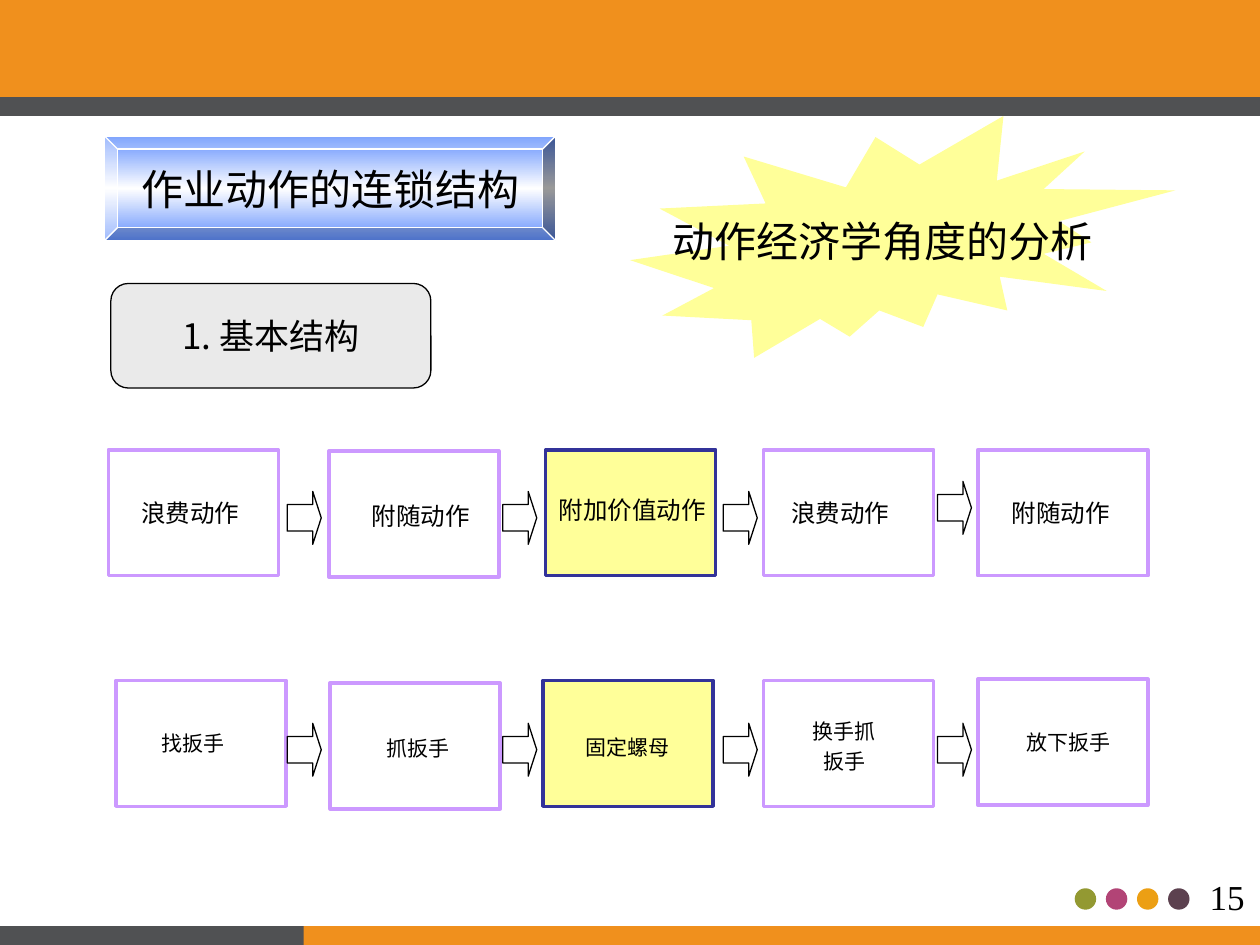
from copy import deepcopy

from lxml.etree import SubElement
from pptx import Presentation
from pptx.dml.color import RGBColor
from pptx.enum.shapes import MSO_SHAPE
from pptx.enum.text import MSO_ANCHOR, PP_ALIGN
from pptx.oxml.ns import qn
from pptx.util import Inches, Pt

ORANGE = RGBColor(0xF0, 0x90, 0x1D)
GRAY = RGBColor(0x50, 0x51, 0x53)
WHITE = RGBColor(0xFF, 0xFF, 0xFF)
BLACK = RGBColor(0, 0, 0)
LILAC = RGBColor(0xCC, 0x99, 0xFF)
YELLOW = RGBColor(0xFF, 0xFF, 0x99)
NAVY = RGBColor(0x33, 0x33, 0x99)
BLUE = RGBColor(0x61, 0x8F, 0xFD)
PALE = RGBColor(0xEA, 0xEA, 0xEA)
DOTS = [RGBColor(0x93, 0x99, 0x32), RGBColor(0xB2, 0x44, 0x76),
        RGBColor(0xEC, 0x9F, 0x14), RGBColor(0x5C, 0x41, 0x4F)]
CJK = "Noto Sans CJK SC"
SERIF = "Times New Roman"

BARS = [(0, 0, 10, 0.77, ORANGE), (0, 0.77, 10, 0.15, GRAY),
        (1.95, 7.35, 8.05, 0.15, ORANGE), (0, 7.35, 2.41, 0.15, GRAY)]

# Each step: box left, box top, label lines, label centre, label top
ACTIONS = [
    (0.86, 3.57, ["浪费动作"], 1.51, 3.9),
    (2.61, 3.58, ["附随动作"], 3.34, 3.93),
    (4.33, 3.57, ["附加价值动作"], 5.02, 3.88),
    (6.06, 3.57, ["浪费动作"], 6.67, 3.9),
    (7.76, 3.57, ["附随动作"], 8.42, 3.9),
]
EXAMPLES = [
    (0.92, 5.4, ["找扳手"], 1.53, 5.75),
    (2.62, 5.42, ["抓扳手"], 3.32, 5.79),
    (4.31, 5.4, ["固定螺母"], 4.98, 5.78),
    (6.06, 5.4, ["换手抓", "扳手"], 6.7, 5.65),
    (7.76, 5.39, ["放下扳手"], 8.48, 5.74),
]
# Each row: steps, label size, tops of the arrows
ROWS = [(ACTIONS, 14, [3.9, 3.9, 3.9, 3.82]), (EXAMPLES, 12, [5.74] * 4)]
ARROW_LEFTS = [2.28, 3.99, 5.74, 7.44]
VALUE_STEP = 2

prs = Presentation()
prs.slide_width, prs.slide_height = Inches(10), Inches(7.5)
slide = prs.slides.add_slide(prs.slide_layouts[6])


def add_shape(kind, x, y, w, h, fill=None, line=None, width=0.75, adj=()):
    s = slide.shapes.add_shape(kind, Inches(x), Inches(y), Inches(w), Inches(h))
    s.shadow.inherit = False
    for i, value in enumerate(adj):
        s.adjustments[i] = value
    if fill is not None:
        s.fill.solid()
        s.fill.fore_color.rgb = fill
    if line is None:
        s.line.fill.background()
    else:
        s.line.color.rgb = line
        s.line.width = Pt(width)
    return s


def write(s, lines, size, font=CJK, anchor=MSO_ANCHOR.MIDDLE):
    tf = s.text_frame
    tf.word_wrap = False
    tf.vertical_anchor = anchor
    for i, text in enumerate(lines):
        p = tf.paragraphs[0] if i == 0 else tf.add_paragraph()
        p.text = text
        p.alignment = PP_ALIGN.CENTER
        if i:
            p.space_before = Pt(3)
        p.font.size = Pt(size)
        p.font.name = font
        p.font.color.rgb = BLACK
        SubElement(p._p.pPr.find(qn("a:defRPr")), qn("a:ea"), typeface=CJK)


def add_label(lines, size, centre, top, font=CJK):
    """Text box just wide enough for its longest line of square characters."""
    w = max(map(len, lines)) * size / 72 + 0.2
    h = 0.1 + len(lines) * size / 60
    s = slide.shapes.add_textbox(Inches(centre - w / 2), Inches(top), Inches(w), Inches(h))
    write(s, lines, size, font, MSO_ANCHOR.TOP)


# Slide frame and page number
for i, color in enumerate(DOTS):
    add_shape(MSO_SHAPE.OVAL, 8.53 + i * 0.247, 7.05, 0.17, 0.17, color)
for x, y, w, h, color in BARS:
    add_shape(MSO_SHAPE.RECTANGLE, x, y, w, h, color)
add_label(["15"], 20, 9.74, 6.9, SERIF)

# Chains of steps
for steps, size, arrow_tops in ROWS:
    for i, (x, y, lines, centre, top) in enumerate(steps):
        fill, line = (YELLOW, NAVY) if i == VALUE_STEP else (WHITE, LILAC)
        add_shape(MSO_SHAPE.RECTANGLE, x, y, 1.35, 1, fill, line, 2)
        add_label(lines, size, centre, top)
    for x, y in zip(ARROW_LEFTS, arrow_tops):
        add_shape(MSO_SHAPE.RIGHT_ARROW, x, y, 0.27, 0.42, WHITE, BLACK, adj=(0.5, 0.25))

# Headings
title = add_shape(MSO_SHAPE.BEVEL, 0.83, 1.08, 3.58, 0.83, line=WHITE, adj=(0.125,))
title.fill.gradient()
title.fill.gradient_angle = 90
stop_list = title._element.spPr.find(qn("a:gradFill")).find(qn("a:gsLst"))
stop_list.insert(1, deepcopy(stop_list[0]))
for stop, position, color in zip(title.fill.gradient_stops, (0, 0.5, 1), (BLUE, WHITE, BLUE)):
    stop.position = position
    stop.color.rgb = color
write(title, ["作业动作的连锁结构"], 24)

section = add_shape(MSO_SHAPE.ROUNDED_RECTANGLE, 0.88, 2.25, 2.54, 0.83, PALE, BLACK,
                    adj=(0.167,))
write(section, ["1. 基本结构"], 20)

burst = add_shape(MSO_SHAPE.EXPLOSION2, 5, 0.92, 4.33, 1.92, YELLOW)
tf = burst.text_frame
tf.margin_left = tf.margin_right = tf.margin_top = tf.margin_bottom = Inches(0.01)
write(burst, ["动作经济学角度的分析"], 24, SERIF)

prs.save("out.pptx")
